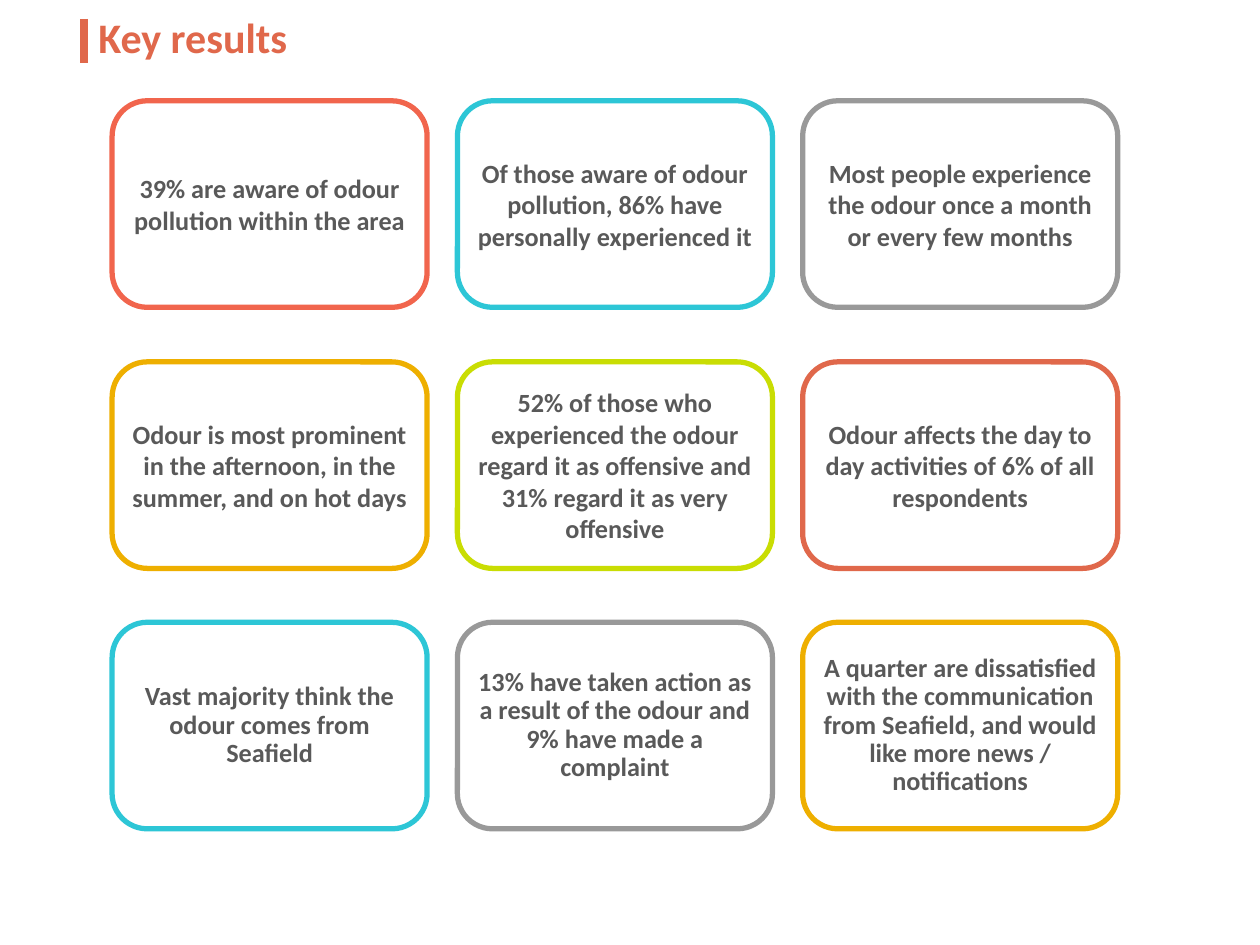
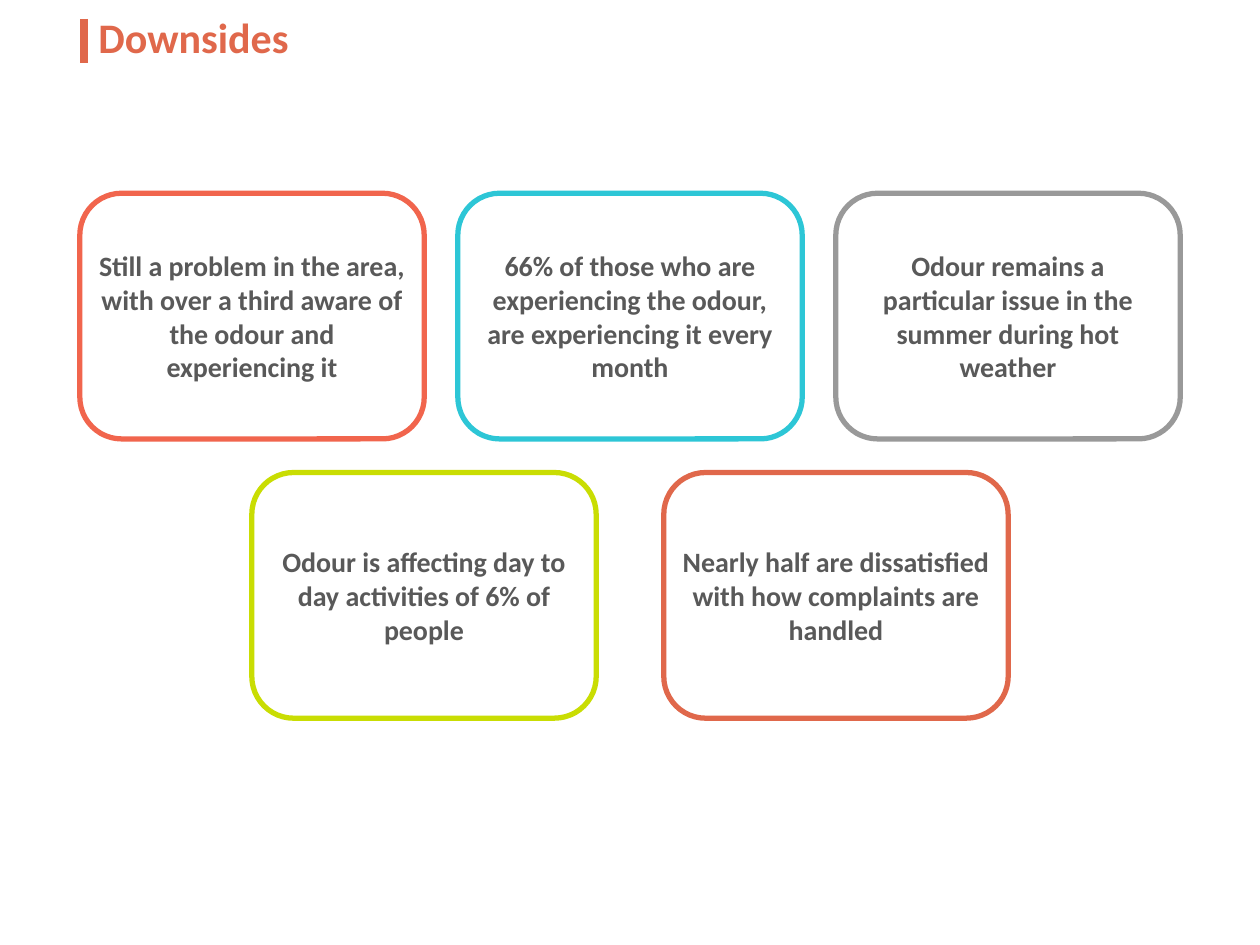
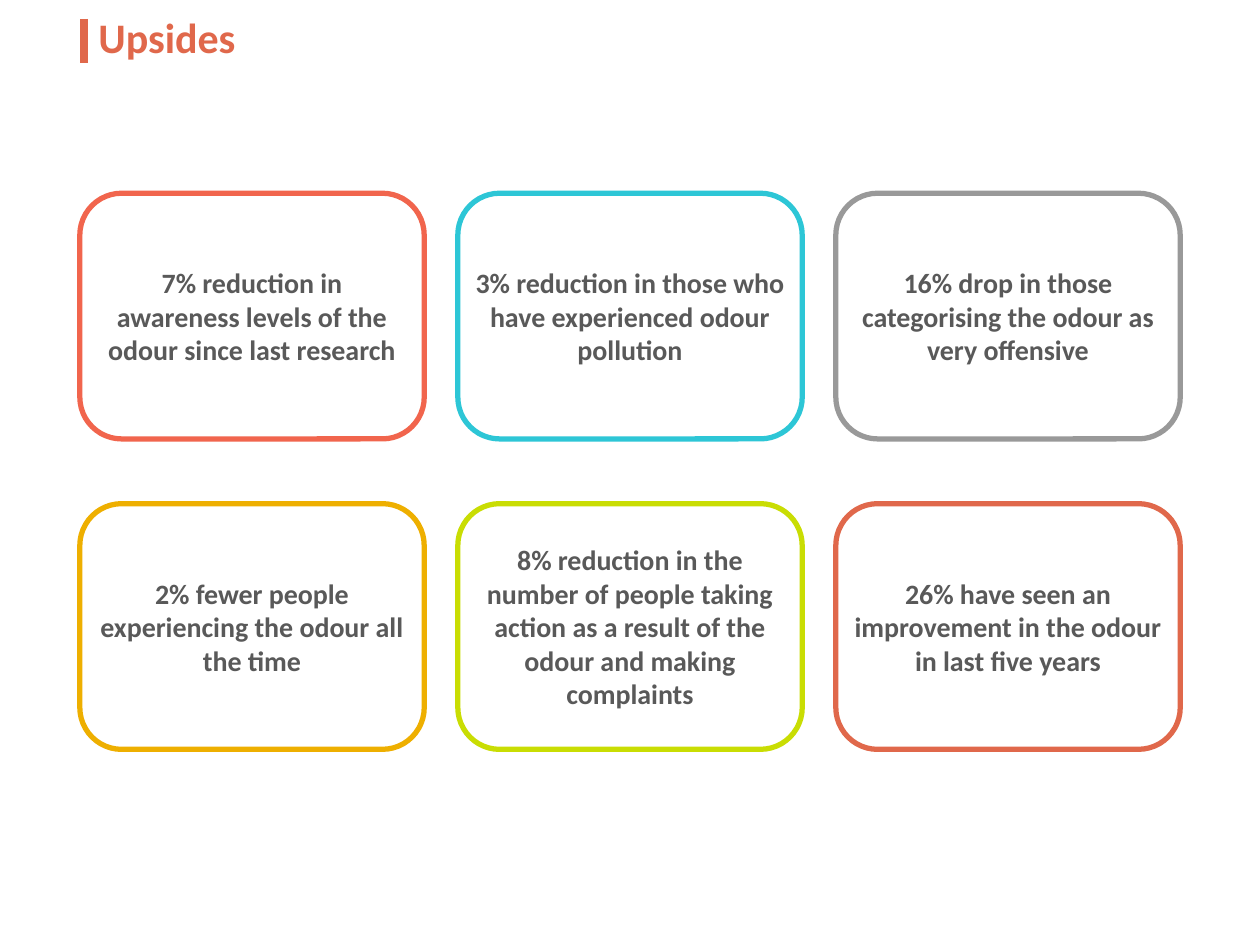
from lxml.etree import SubElement
from pptx import Presentation
from pptx.dml.color import RGBColor
from pptx.enum.shapes import MSO_CONNECTOR, MSO_SHAPE
from pptx.enum.text import MSO_ANCHOR, MSO_AUTO_SIZE, PP_ALIGN
from pptx.oxml.ns import qn
from pptx.util import Pt

CORAL = RGBColor(0xF1, 0x65, 0x4D)
TURQUOISE = RGBColor(0x2D, 0xC6, 0xD6)
GREY = RGBColor(0x99, 0x99, 0x99)
AMBER = RGBColor(0xEE, 0xAF, 0x00)
LIME = RGBColor(0xC9, 0xDD, 0x03)
ORANGE = RGBColor(0xE0, 0x68, 0x4B)
TEXT_GREY = RGBColor(0x59, 0x59, 0x59)
WHITE = RGBColor(0xFF, 0xFF, 0xFF)

FONT = "Calibri"
SLIDE_WIDTH, SLIDE_HEIGHT = 720, 540
TITLE_BOX = (56.2, 8.6, 629.3, 25.2)
TITLE_BAR = {"x": 48.2, "top": 10.8, "bottom": 36}
CORNER_RATIO = 0.17
TEXT_MARGIN = 10
CORNER_INSET = 0.29  # share of the corner radius a rounded rectangle already keeps free

SMALL_CARDS = {"width": 180, "height": 118, "size": 15, "centre": 351.4}
LARGE_CARDS = {"width": 196.8, "height": 140.4, "size": 16, "centre": 360}

# Each row: top, distance between card lefts, line spacing, cards
SLIDES = [
    ("Key results", SMALL_CARDS, [
        (57.6, 197.3, 1, [
            ("39% are aware of odour pollution within the area", CORAL),
            ("Of those aware of odour pollution, 86% have personally experienced it", TURQUOISE),
            ("Most people experience the odour once a month or every few months", GREY),
        ]),
        (206.8, 197.3, 1, [
            ("Odour is most prominent in the afternoon, in the summer, and on hot days", AMBER),
            ("52% of those who experienced the odour regard it as offensive "
             "and 31% regard it as very offensive", LIME),
            ("Odour affects the day to day activities of 6% of all respondents", ORANGE),
        ]),
        (355.6, 197.3, 0.9, [
            ("Vast majority think the odour comes from Seafield", TURQUOISE),
            ("13% have taken action as a result of the odour and 9% have made a complaint", GREY),
            ("A quarter are dissatisfied with the communication from Seafield, "
             "and would like more news / notifications", AMBER),
        ]),
    ]),
    ("Downsides", LARGE_CARDS, [
        (110.4, 216, 1, [
            ("Still a problem in the area, with over a third aware of the odour "
             "and experiencing it", CORAL),
            ("66% of those who are experiencing the odour, are experiencing it every month",
             TURQUOISE),
            ("Odour remains a particular issue in the summer during hot weather", GREY),
        ]),
        (270, 235.4, 1, [
            ("Odour is affecting day to day activities of 6% of people", LIME),
            ("Nearly half are dissatisfied with how complaints are handled", ORANGE),
        ]),
    ]),
    ("Upsides", LARGE_CARDS, [
        (110.4, 216, 1, [
            ("7% reduction in awareness levels of the odour since last research", CORAL),
            ("3% reduction in those who have experienced odour pollution", TURQUOISE),
            ("16% drop in those categorising the odour as very offensive", GREY),
        ]),
        (287.8, 216, 1, [
            ("2% fewer people experiencing the odour all the time", AMBER),
            ("8% reduction in the number of people taking action as a result of the odour "
             "and making complaints", LIME),
            ("26% have seen an improvement in the odour in last five years", ORANGE),
        ]),
    ]),
]


def write_text(shape, text, *, size, color, align, margin=0, line_spacing=1):
    frame = shape.text_frame
    frame.word_wrap = True
    frame.auto_size = MSO_AUTO_SIZE.NONE
    frame.vertical_anchor = MSO_ANCHOR.MIDDLE
    frame.margin_left = frame.margin_right = Pt(margin)
    frame.margin_top = frame.margin_bottom = Pt(margin)
    frame.text = text
    paragraph = frame.paragraphs[0]
    paragraph.alignment = align
    paragraph.line_spacing = line_spacing
    font = paragraph.runs[0].font
    font.name, font.size, font.bold = FONT, Pt(size), True
    font.color.rgb = color


def add_title(slide, text):
    bar_x = Pt(TITLE_BAR["x"])
    bar = slide.shapes.add_connector(MSO_CONNECTOR.STRAIGHT, bar_x, Pt(TITLE_BAR["top"]),
                                     bar_x, Pt(TITLE_BAR["bottom"]))
    bar.line.color.rgb = ORANGE
    bar.line.width = Pt(4.5)
    SubElement(bar.line._get_or_add_ln().getparent(), qn("a:effectLst"))
    title = slide.shapes.title
    title.left, title.top, title.width, title.height = map(Pt, TITLE_BOX)
    write_text(title, text, size=24, color=ORANGE, align=PP_ALIGN.LEFT)


def add_card(slide, text, color, left, top, style, line_spacing):
    width, height = style["width"], style["height"]
    card = slide.shapes.add_shape(MSO_SHAPE.ROUNDED_RECTANGLE,
                                  Pt(left), Pt(top), Pt(width), Pt(height))
    card.adjustments[0] = CORNER_RATIO
    card.shadow.inherit = False
    card.fill.solid()
    card.fill.fore_color.rgb = WHITE
    card.line.color.rgb = color
    card.line.width = Pt(3)
    margin = TEXT_MARGIN - CORNER_INSET * CORNER_RATIO * height
    write_text(card, text, size=style["size"], color=TEXT_GREY, align=PP_ALIGN.CENTER,
               margin=margin, line_spacing=line_spacing)


def add_row(slide, style, top, pitch, line_spacing, cards):
    """Place the cards at equal steps, centred on the style's centre line."""
    first_left = style["centre"] - ((len(cards) - 1) * pitch + style["width"]) / 2
    for column, (text, color) in enumerate(cards):
        add_card(slide, text, color, first_left + column * pitch, top, style, line_spacing)


def main():
    presentation = Presentation()
    presentation.slide_width, presentation.slide_height = Pt(SLIDE_WIDTH), Pt(SLIDE_HEIGHT)
    title_only = presentation.slide_layouts[5]
    for title, style, rows in SLIDES:
        slide = presentation.slides.add_slide(title_only)
        add_title(slide, title)
        for row in rows:
            add_row(slide, style, *row)
    presentation.save("out.pptx")


if __name__ == "__main__":
    main()
